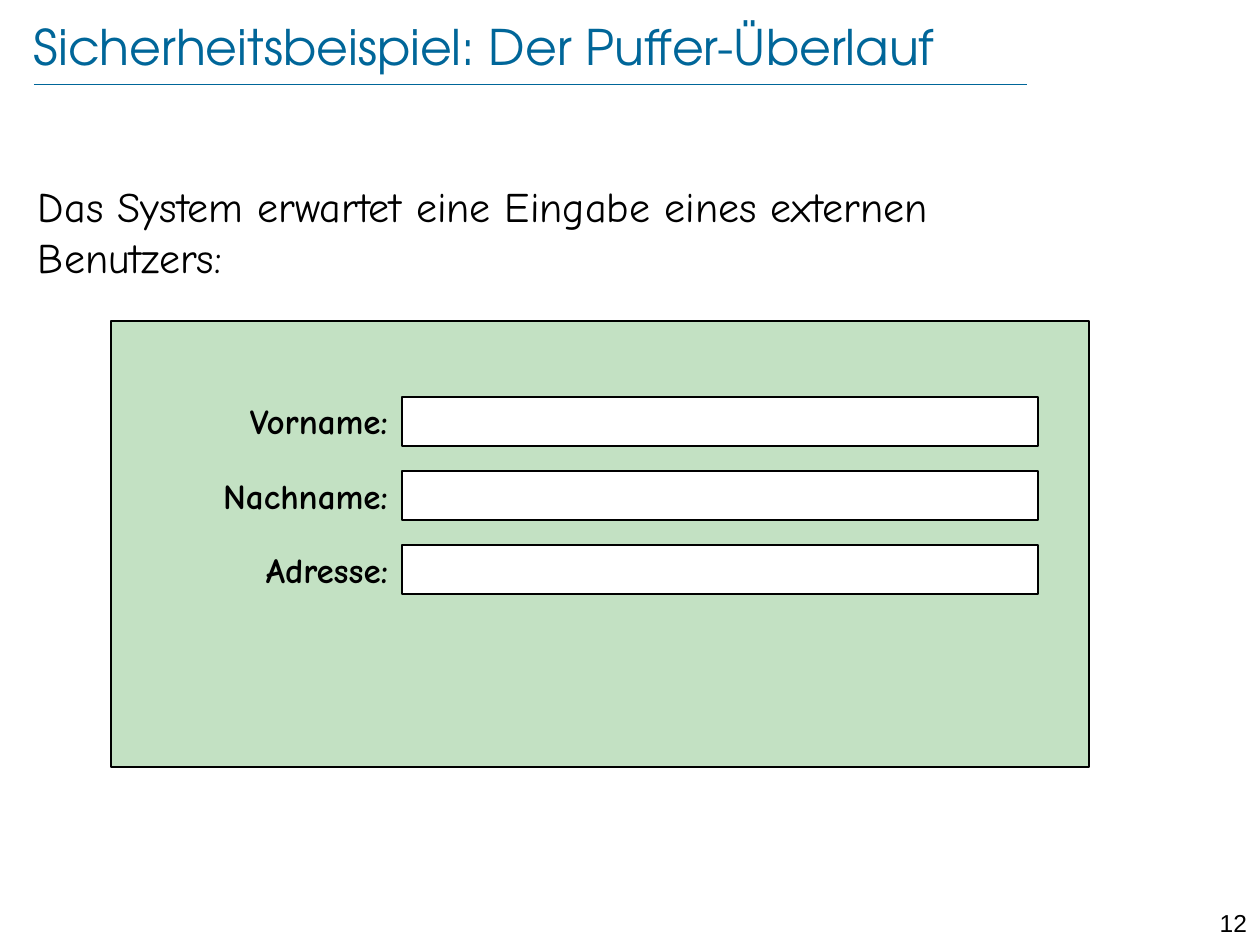
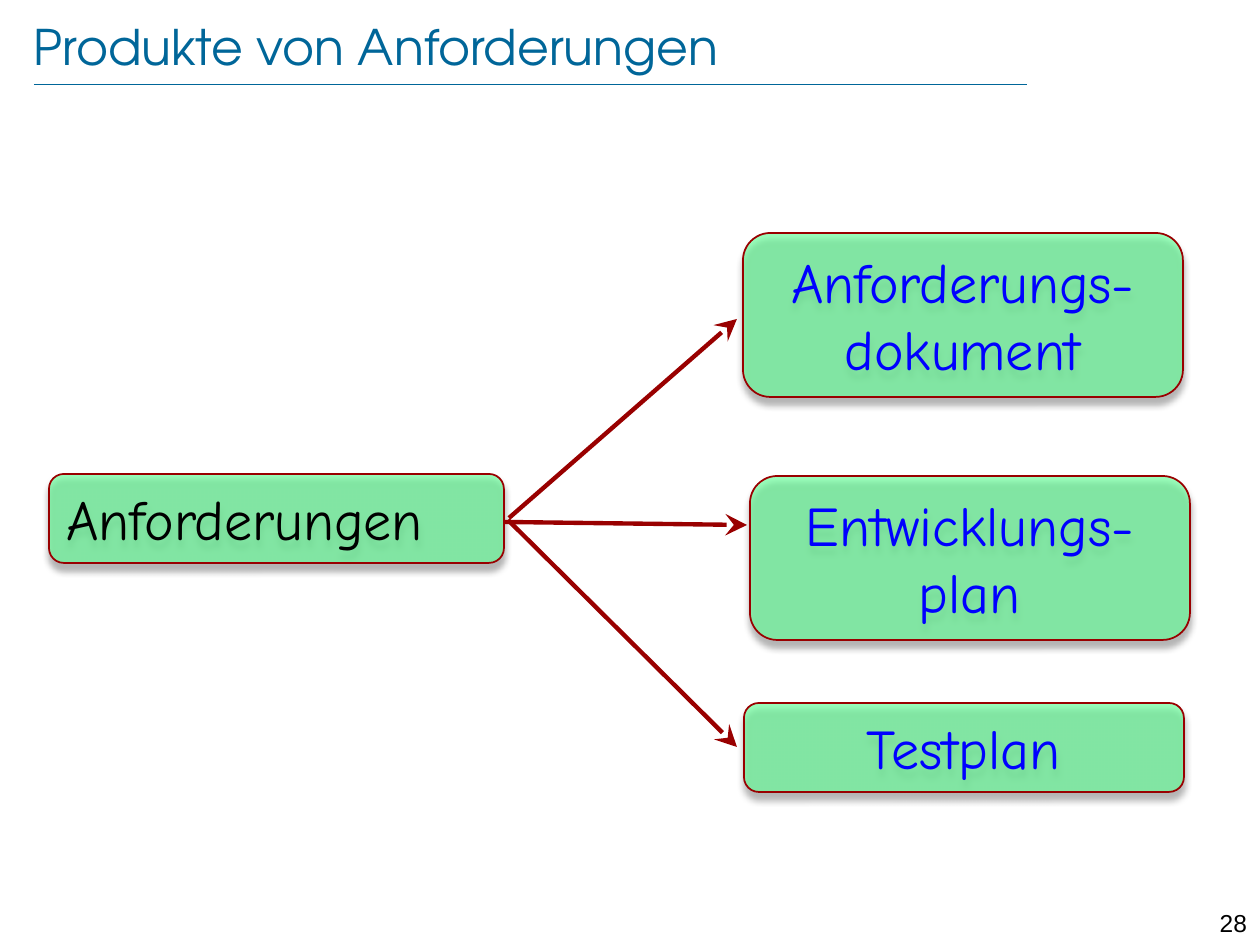
from lxml import etree
from pptx import Presentation
from pptx.dml.color import RGBColor
from pptx.enum.shapes import MSO_CONNECTOR as CONN, MSO_SHAPE as SHAPE
from pptx.enum.text import MSO_ANCHOR as ANCHOR, PP_ALIGN as ALIGN
from pptx.oxml import parse_xml
from pptx.oxml.ns import nsdecls, qn
from pptx.util import Emu, Pt

SCALE = 914400 / 126
COLORS = {
    "title": "006699",
    "text": "000000",
    "white": "FFFFFF",
    "form": "339933",
    "node": "66FF99",
    "edge": "990000",
    "product": "0000FF",
}
TITLE_FONT, BODY_FONT, NUMBER_FONT = "TeX Gyre Adventor", "Comic Neue", "Arial"
INSET_X, INSET_Y = 13, 6


def px(n):
    return Emu(round(n * SCALE))


def rgb(name):
    return RGBColor.from_string(COLORS[name])


def write(shape, text, size, font=BODY_FONT, color="text", bold=False,
          align=ALIGN.LEFT, anchor=ANCHOR.TOP, inset=True):
    tf = shape.text_frame
    tf.word_wrap = True
    tf.vertical_anchor = anchor
    tf.margin_left = tf.margin_right = px(INSET_X if inset else 0)
    tf.margin_top = tf.margin_bottom = px(INSET_Y if inset else 0)
    p = tf.paragraphs[0]
    p.alignment = align
    r = p.add_run()
    r.text = text
    r.font.size, r.font.name, r.font.bold = Pt(size), font, bold
    r.font.color.rgb = rgb(color)


def add_text(slide, box, text, size, **style):
    write(slide.shapes.add_textbox(*map(px, box)), text, size, **style)


def add_box(slide, kind, box, fill, line, width, alpha=100):
    """Add a filled, outlined shape; alpha is the opacity in percent."""
    sp = slide.shapes.add_shape(kind, *map(px, box))
    sp.shadow.inherit = False
    sp.fill.solid()
    sp.fill.fore_color.rgb = rgb(fill)
    if alpha < 100:
        clr = sp._element.spPr.find(qn("a:solidFill"))[0]
        etree.SubElement(clr, qn("a:alpha")).set("val", str(alpha * 1000))
    sp.line.color.rgb = rgb(line)
    sp.line.width = Pt(width)
    return sp


def add_line(slide, start, end, color, width, arrow=False):
    line = slide.shapes.add_connector(CONN.STRAIGHT, *map(px, start + end))
    line.line.color.rgb = rgb(color)
    line.line.width = Pt(width)
    if arrow:
        head = etree.SubElement(line.line._get_or_add_ln(), qn("a:tailEnd"))
        head.set("type", "stealth")
        head.set("w", "lg")
        head.set("len", "lg")
    etree.SubElement(line._element.spPr, qn("a:effectLst"))


def add_drop_shadow(shape):
    effects = shape._element.spPr.find(qn("a:effectLst"))
    effects.append(parse_xml(
        f'<a:outerShdw {nsdecls("a")} blurRad="{Pt(4)}" dist="{Pt(4)}" '
        f'dir="5400000" rotWithShape="0"><a:srgbClr val="{COLORS["text"]}">'
        '<a:alpha val="43000"/></a:srgbClr></a:outerShdw>'))


def base_slide(prs, title, number):
    """Add a blank slide with the title, its rule and the page number."""
    slide = prs.slides.add_slide(prs.slide_layouts[6])
    add_line(slide, (34, 84), (1027, 84), "title", 0.25)
    add_text(slide, (1191, 902, 69, 30), str(number), 14, font=NUMBER_FONT,
             align=ALIGN.RIGHT)
    add_text(slide, (34, 16, 1095, 60), title, 28, font=TITLE_FONT,
             color="title", anchor=ANCHOR.MIDDLE, inset=False)
    return slide


def input_form(slide, box, labels):
    left, top, width, _ = box
    add_box(slide, SHAPE.RECTANGLE, box, "form", "text", 1.5, alpha=29)
    field_x, field_h, pitch, label_w, gap = left + 291, 49, 74, 296, 14
    for i, label in enumerate(labels):
        y = top + 76 + i * pitch
        add_text(slide, (field_x - gap - label_w, y + 3, label_w, 42), label, 20,
                 bold=True, align=ALIGN.RIGHT, inset=False)
        add_box(slide, SHAPE.RECTANGLE,
                (field_x, y, left + width - 51 - field_x, field_h),
                "white", "text", 1)


def node(slide, box, text, **style):
    sp = add_box(slide, SHAPE.ROUNDED_RECTANGLE, box, "node", "edge", 1, alpha=65)
    add_drop_shadow(sp)
    write(sp, text, 32, anchor=ANCHOR.MIDDLE, **style)


def product_diagram(slide, box):
    """Draw the requirements node and an arrow to each of its products."""
    left, top, _, _ = box
    node(slide, (left, top + 241, 455, 89), "Anforderungen")
    products = [
        ("Anforderungs-dokument", 694, 0, 164),
        ("Entwicklungs-plan", 701, 243, 164),
        ("Testplan", 695, 470, 89),
    ]
    for text, dx, dy, height in products:
        node(slide, (left + dx, top + dy, 440, height), text,
             color="product", align=ALIGN.CENTER)
    arrows = [((460, 285), (688, 86)), ((456, 289), (698, 292)),
              ((459, 287), (688, 514))]
    for ends in arrows:
        start, end = [(left + x, top + y) for x, y in ends]
        add_line(slide, start, end, "edge", 2.5, arrow=True)


def main():
    prs = Presentation()
    prs.slide_width, prs.slide_height = px(1260), px(945)

    slide = base_slide(prs, "Sicherheitsbeispiel: Der Puffer-Überlauf", 12)
    add_text(slide, (25, 175, 1037, 113),
             "Das System erwartet eine Eingabe eines externen Benutzers:", 24)
    input_form(slide, (111, 321, 978, 446), ["Vorname:", "Nachname:", "Adresse:"])

    slide = base_slide(prs, "Produkte von Anforderungen", 28)
    product_diagram(slide, (49, 233, 1141, 559))

    prs.save("out.pptx")


if __name__ == "__main__":
    main()
